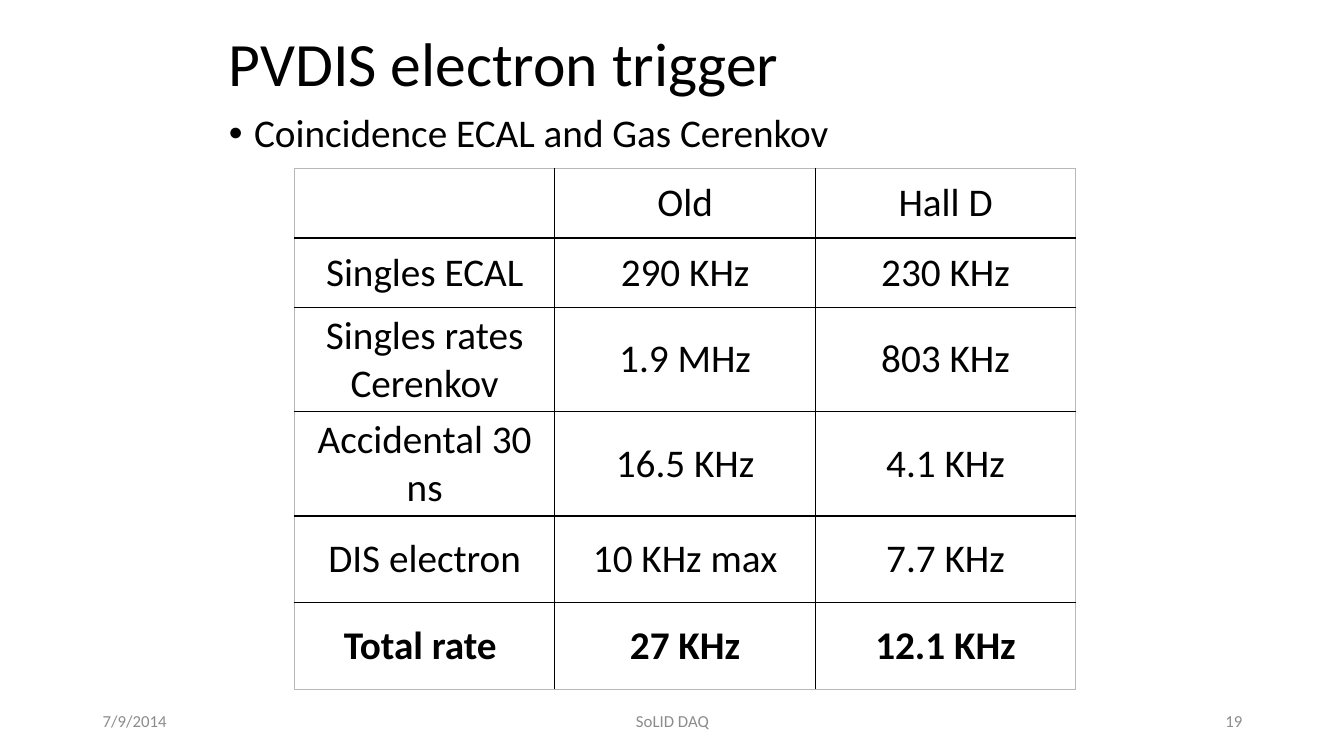
from lxml.etree import SubElement
from pptx import Presentation
from pptx.dml.color import RGBColor
from pptx.enum.text import MSO_ANCHOR as Anchor, MSO_AUTO_SIZE as AutoSize, PP_ALIGN as Align
from pptx.oxml.ns import qn
from pptx.util import Inches, Pt

# Content
TITLE = "PVDIS electron trigger"
BULLET = "Coincidence ECAL and Gas Cerenkov"
RATES = [
    ("", "Old", "Hall D"),
    ("Singles ECAL", "290 KHz", "230 KHz"),
    ("Singles rates Cerenkov", "1.9 MHz", "803 KHz"),
    ("Accidental 30 ns", "16.5 KHz", "4.1 KHz"),
    ("DIS electron", "10 KHz max", "7.7 KHz"),
    ("Total rate ", "27 KHz", "12.1 KHz"),
]
# text, left, width, alignment
FOOTER = [
    ("7/9/2014", 0.92, 3, Align.LEFT),
    ("SoLID DAQ", 4.42, 4.5, Align.CENTER),
    ("19", 9.42, 3, Align.RIGHT),
]

# Look and measures
FONT = "Calibri"
BLACK = RGBColor(0x00, 0x00, 0x00)
FOOTER_GRAY = RGBColor(0x8C, 0x8C, 0x8C)
EDGE_GRAY = RGBColor(0xB8, 0xB8, 0xB8)
TEXT_LEFT, TEXT_WIDTH = 2.17, 9
TABLE_LEFT, TABLE_TOP, TABLE_WIDTH = 2.92, 1.67, 7.75
ROW_HEIGHTS = [0.69, 0.69, 0.99, 0.99, 0.86, 0.86]


def place(shape, left, top, width, height):
    shape.left, shape.top = Inches(left), Inches(top)
    shape.width, shape.height = Inches(width), Inches(height)


def write(text_frame, text, size, color=BLACK, align=Align.LEFT, bold=False):
    text_frame.text = text
    paragraph = text_frame.paragraphs[0]
    paragraph.alignment = align
    for font in [paragraph.font] + [run.font for run in paragraph.runs]:
        font.name, font.size, font.bold = FONT, Pt(size), bold
        font.color.rgb = color
    return paragraph


def add_border(cell, side, color, width):
    line = SubElement(cell._tc.get_or_add_tcPr(), qn("a:" + side), w=str(Pt(width)))
    fill = SubElement(line, qn("a:solidFill"))
    SubElement(fill, qn("a:srgbClr"), val=str(color))


def cell_borders(row, column):
    last_row, last_column = len(RATES) - 1, len(RATES[0]) - 1
    edges = {"lnL": column == 0, "lnR": column == last_column,
             "lnT": row == 0, "lnB": row == last_row}
    for side, is_edge in edges.items():
        under_header = (row, side) in [(0, "lnB"), (1, "lnT")]
        yield side, EDGE_GRAY if is_edge else BLACK, 1.5 if under_header else 1


presentation = Presentation()
presentation.slide_width, presentation.slide_height = Inches(13.33), Inches(7.5)
slide = presentation.slides.add_slide(presentation.slide_layouts[1])

# Title and bullet
title, body = slide.shapes.title, slide.placeholders[1]
place(title, TEXT_LEFT, 0.04, TEXT_WIDTH, 1.25)
place(body, TEXT_LEFT, 1.08, TEXT_WIDTH, 4.95)
for shape, text, size in [(title, TITLE, 44), (body, BULLET, 28)]:
    paragraph = write(shape.text_frame, text, size)
    paragraph.line_spacing = 0.9
    shape.text_frame.auto_size = AutoSize.NONE
title.text_frame.vertical_anchor = Anchor.MIDDLE
paragraph.space_before = Pt(10)
bullet_properties = paragraph._p.get_or_add_pPr()
bullet_properties.set("marL", str(Inches(0.25)))
bullet_properties.set("indent", str(Inches(-0.25)))

# Footer line
for text, left, width, align in FOOTER:
    box = slide.shapes.add_textbox(Inches(left), Inches(6.95), Inches(width), Inches(0.4))
    box.text_frame.word_wrap = True
    box.text_frame.vertical_anchor = Anchor.MIDDLE
    write(box.text_frame, text, 12, FOOTER_GRAY, align)

# Rate table
table = slide.shapes.add_table(
    len(RATES), len(RATES[0]), Inches(TABLE_LEFT), Inches(TABLE_TOP),
    Inches(TABLE_WIDTH), Inches(sum(ROW_HEIGHTS))).table
table.first_row = table.horz_banding = False
for row, (height, values) in enumerate(zip(ROW_HEIGHTS, RATES)):
    table.rows[row].height = Inches(height)
    for column, value in enumerate(values):
        cell = table.cell(row, column)
        cell.vertical_anchor = Anchor.MIDDLE
        write(cell.text_frame, value, 28, align=Align.CENTER, bold=row == len(RATES) - 1)
        for side, color, width in cell_borders(row, column):
            add_border(cell, side, color, width)
        cell.fill.background()

presentation.save("out.pptx")
